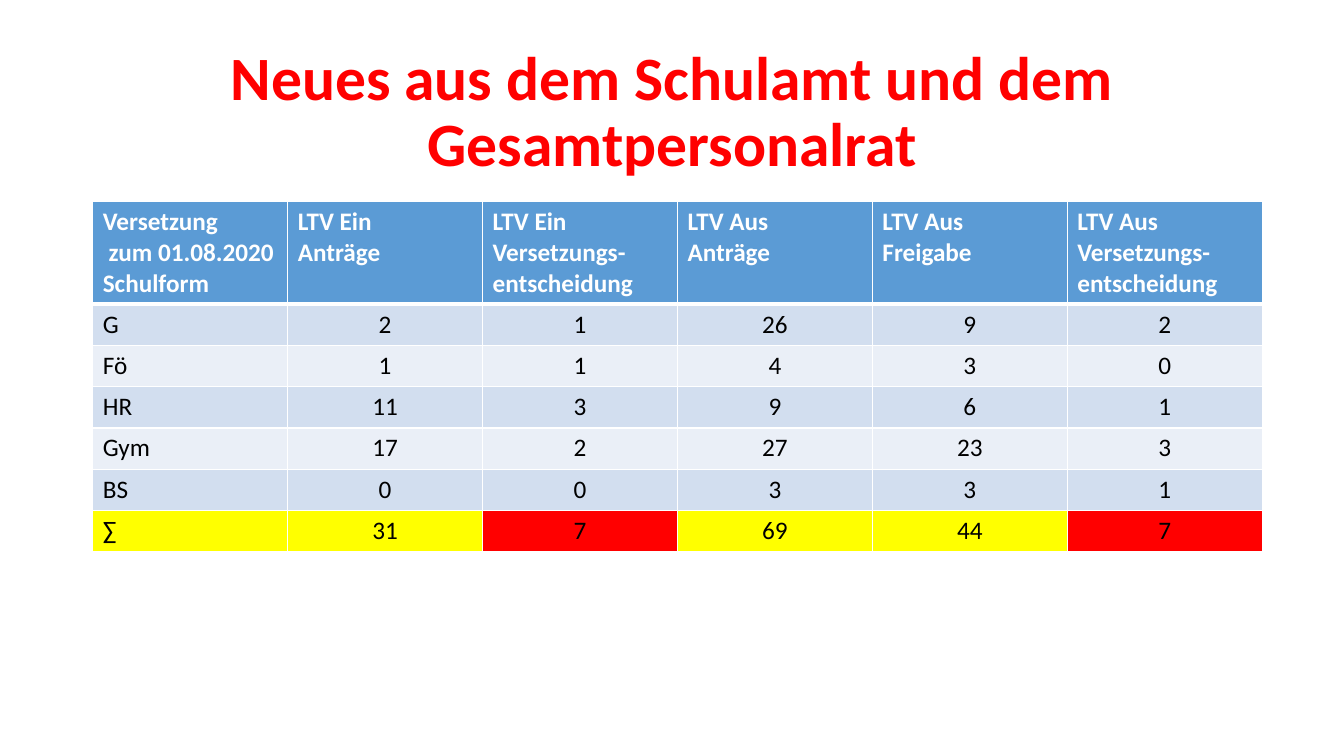
from dataclasses import dataclass
from typing import Any

from lxml.etree import SubElement as Sub
from pptx import Presentation
from pptx.dml.color import RGBColor
from pptx.enum.text import MSO_ANCHOR as Anchor, MSO_AUTO_SIZE as Fit, PP_ALIGN as Align
from pptx.oxml.ns import qn
from pptx.util import Inches, Pt

WHITE = RGBColor(0xFF, 0xFF, 0xFF)
BLACK = RGBColor(0x00, 0x00, 0x00)
RED = RGBColor(0xFF, 0x00, 0x00)
YELLOW = RGBColor(0xFF, 0xFF, 0x00)
BLUE = RGBColor(0x5B, 0x9B, 0xD5)
PALE = RGBColor(0xD2, 0xDE, 0xEF)
LIGHT = RGBColor(0xEA, 0xEF, 0xF7)

TITLE = "Neues aus dem Schulamt und dem Gesamtpersonalrat"
LEFT, WIDTH = Inches(0.92), Inches(11.6)
HEAD, BODY = Inches(1), Inches(0.41)


@dataclass(frozen=True)
class Row:
    cells: tuple[str, ...]
    fill: RGBColor
    color: RGBColor = BLACK
    bold: bool = False
    edge: int = 1
    marks: tuple[int, ...] = ()


ROWS = (
    Row(
        (
            "Versetzung\n zum 01.08.2020\nSchulform",
            "LTV Ein\nAnträge",
            "LTV Ein Versetzungs-\nentscheidung",
            "LTV Aus\nAnträge",
            "LTV Aus\nFreigabe",
            "LTV Aus\nVersetzungs-\nentscheidung",
        ),
        BLUE, WHITE, True, 3,
    ),
    Row(("G", "2", "1", "26", "9", "2"), PALE),
    Row(("Fö", "1", "1", "4", "3", "0"), LIGHT),
    Row(("HR", "11", "3", "9", "6", "1"), PALE),
    Row(("Gym", "17", "2", "27", "23", "3"), LIGHT),
    Row(("BS", "0", "0", "3", "3", "1"), PALE),
    Row(("∑", "31", "7", "69", "44", "7"), YELLOW, marks=(2, 5)),
)


def style(font: Any, size: int, color: RGBColor, bold: bool) -> None:
    for key, value in {"name": "Calibri", "size": Pt(size), "bold": bold}.items():
        setattr(font, key, value)
    font.color.rgb = color


def edge(cell: Any, top: int, base: int) -> None:
    props = cell._tc.get_or_add_tcPr()
    for side, width in {"lnL": 1, "lnR": 1, "lnT": top, "lnB": base}.items():
        line = Sub(props, qn(f"a:{side}"), w=str(Pt(width)))
        Sub(Sub(line, qn("a:solidFill")), qn("a:srgbClr"), val=str(WHITE))


def add_title(slide: Any) -> None:
    title = slide.shapes.title
    place = {"left": LEFT, "top": Inches(0.4), "width": Inches(11.5), "height": Inches(1.45)}
    for key, value in place.items():
        setattr(title, key, value)
    frame = title.text_frame
    form = {"text": TITLE, "word_wrap": True, "auto_size": Fit.NONE, "vertical_anchor": Anchor.MIDDLE}
    for key, value in form.items():
        setattr(frame, key, value)
    para = frame.paragraphs[0]
    para.alignment, para.line_spacing = Align.CENTER, 0.9
    style(para.runs[0].font, 44, RED, True)


def add_grid(slide: Any) -> None:
    count = len(ROWS[0].cells)
    high = HEAD + BODY * (len(ROWS) - 1)
    table = slide.shapes.add_table(len(ROWS), count, LEFT, Inches(2), WIDTH, high).table
    top = 1
    for i, row in enumerate(ROWS):
        table.rows[i].height = BODY if i else HEAD
        for j, text in enumerate(row.cells):
            cell = table.cell(i, j)
            edge(cell, top, row.edge)
            cell.fill.solid()
            cell.fill.fore_color.rgb = RED if j in row.marks else row.fill
            cell.text = text
            for para in cell.text_frame.paragraphs:
                para.alignment = Align.CENTER if i and j else Align.LEFT
                style(para.runs[0].font, 18, row.color, row.bold)
        top = row.edge


def main() -> None:
    deck = Presentation()
    deck.slide_width, deck.slide_height = Inches(13.33), Inches(7.5)
    slide = deck.slides.add_slide(deck.slide_layouts[5])
    add_title(slide)
    add_grid(slide)
    deck.save("out.pptx")


if __name__ == "__main__":
    main()
